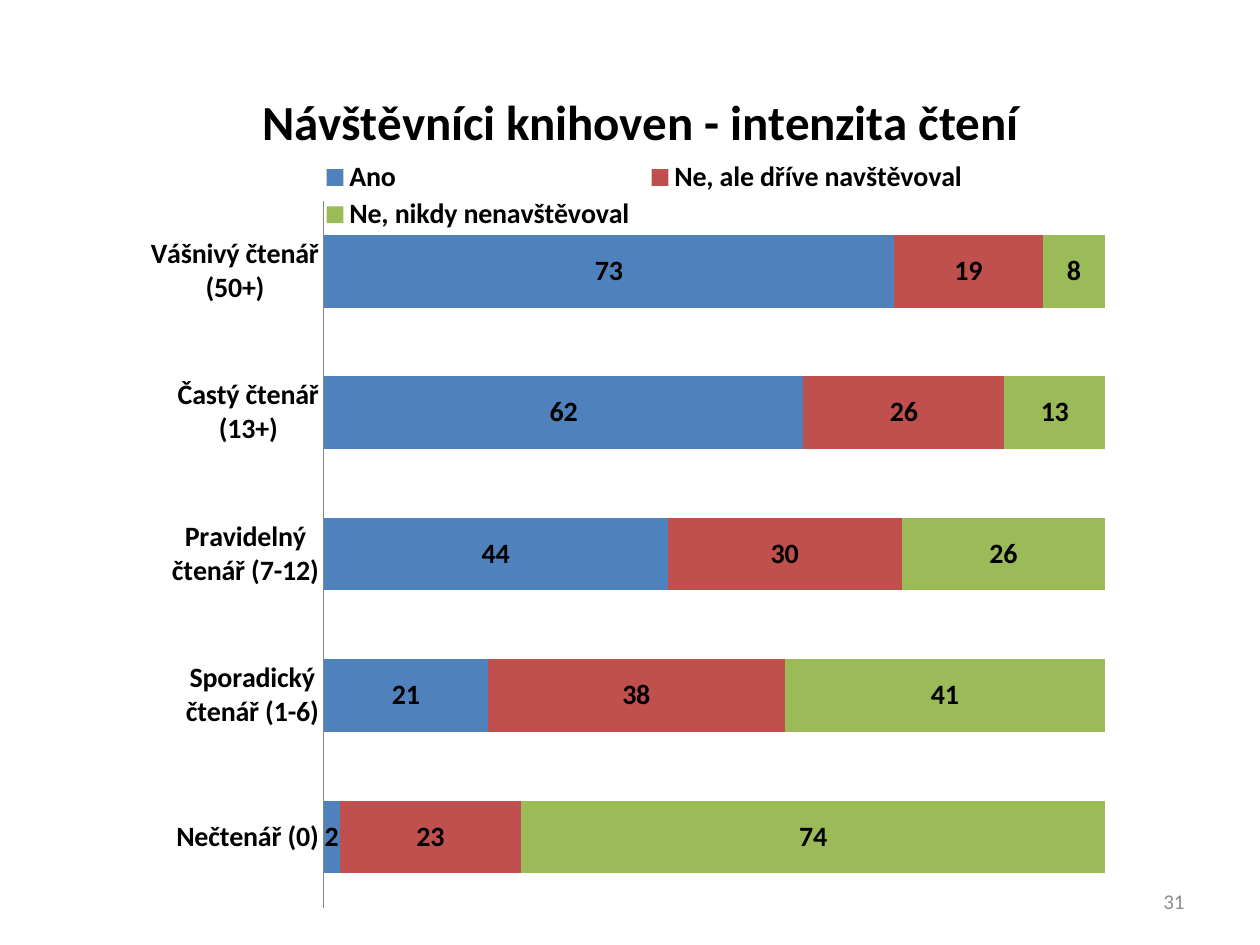
import pptx
import pptx.util
import pptx.chart.data
import pptx.dml.color
import pptx.enum.chart
import pptx.enum.text
import pptx.oxml
import pptx.oxml.ns

Inches = pptx.util.Inches
Pt = pptx.util.Pt
RGBColor = pptx.dml.color.RGBColor

FONT = "Calibri"
BLACK = RGBColor(0x00, 0x00, 0x00)
GREY = RGBColor(0x8C, 0x8C, 0x8C)
LINE = RGBColor(0x86, 0x86, 0x86)
BLUE = RGBColor(0x4F, 0x81, 0xBD)
RED = RGBColor(0xC0, 0x50, 0x4D)
GREEN = RGBColor(0x9B, 0xBB, 0x59)

TITLE = "Návštěvníci knihoven - intenzita čtení"
READERS = ["Nečtenář (0)", "Sporadický čtenář (1-6)", "Pravidelný čtenář (7-12)",
           "Častý čtenář (13+)", "Vášnivý čtenář (50+)"]
SERIES = [
    ("Ano", BLUE, [2, 21, 44, 62, 73]),
    ("Ne, ale dříve navštěvoval", RED, [23, 38, 30, 26, 19]),
    ("Ne, nikdy nenavštěvoval", GREEN, [74, 41, 26, 13, 8]),
]


def style(font, size, color=BLACK, bold=True):
    font.name = FONT
    font.size = Pt(size)
    font.bold = bold
    font.color.rgb = color


def place(part, index, **spots):
    """Give a chart part a manual layout, in fractions of the chart."""
    for old in part.findall(pptx.oxml.ns.qn("c:layout")):
        part.remove(old)
    modes = "".join(f'<c:{key}Mode val="edge"/>' for key in ("x", "y"))
    sizes = "".join(f'<c:{key} val="{val}"/>' for key, val in spots.items())
    inner = '<c:layoutTarget val="inner"/>' if index == 0 else ""
    part.insert(index, pptx.oxml.parse_xml(
        f'<c:layout {pptx.oxml.ns.nsdecls("c")}><c:manualLayout>'
        f"{inner}{modes}{sizes}</c:manualLayout></c:layout>"))


def add_bars(slide):
    data = pptx.chart.data.CategoryChartData(number_format="###0")
    data.categories = READERS
    for name, _, vals in SERIES:
        data.add_series(name, vals)
    chart = slide.shapes.add_chart(
        pptx.enum.chart.XL_CHART_TYPE.BAR_STACKED_100, Inches(1.06), Inches(0.36),
        Inches(7.95), Inches(6.85), data).chart
    style(chart.font, 10, bold=False)
    plot = chart.plots[0]
    plot.gap_width = 95
    plot.overlap = 100
    plot.vary_by_categories = False
    for series, (_, color, _) in zip(plot.series, SERIES):
        series.format.fill.solid()
        series.format.fill.fore_color.rgb = color
        labels = series.data_labels
        labels.show_value = True
        labels.number_format = "###0"
        labels.number_format_is_linked = False
        style(labels.font, 16)
    place(chart.element.chart.plotArea, 0, x=0.19, y=0.18, w=0.78, h=0.82)
    return chart


def set_axes(chart):
    none = pptx.enum.chart.XL_TICK_MARK.NONE
    axis = chart.category_axis
    axis.major_tick_mark = none
    axis.minor_tick_mark = none
    axis.format.line.color.rgb = LINE
    style(axis.tick_labels.font, 16)
    chart.value_axis.visible = False
    chart.value_axis.has_major_gridlines = False


def set_title(chart):
    chart.has_title = True
    title = chart.chart_title
    run = title.text_frame.paragraphs[0].add_run()
    run.text = TITLE
    style(run.font, 28)
    place(title._element, 1, x=0.12, y=0.04)


def set_legend(chart):
    chart.has_legend = True
    legend = chart.legend
    legend.position = pptx.enum.chart.XL_LEGEND_POSITION.TOP
    legend.include_in_layout = False
    style(legend.font, 16)
    place(legend._element, 1, x=0.18, y=0.13, w=0.66, h=0.09)


def add_number(slide, text):
    box = slide.shapes.add_textbox(Inches(7.17), Inches(6.95), Inches(2.33), Inches(0.4))
    frame = box.text_frame
    frame.word_wrap = True
    frame.vertical_anchor = pptx.enum.text.MSO_ANCHOR.MIDDLE
    para = frame.paragraphs[0]
    para.alignment = pptx.enum.text.PP_ALIGN.RIGHT
    run = para.add_run()
    run.text = text
    style(run.font, 12, GREY, False)


def main():
    deck = pptx.Presentation()
    deck.slide_width = Inches(10)
    deck.slide_height = Inches(7.5)
    slide = deck.slides.add_slide(deck.slide_layouts[6])
    chart = add_bars(slide)
    set_axes(chart)
    set_title(chart)
    set_legend(chart)
    add_number(slide, "31")
    deck.save("out.pptx")


if __name__ == "__main__":
    main()
